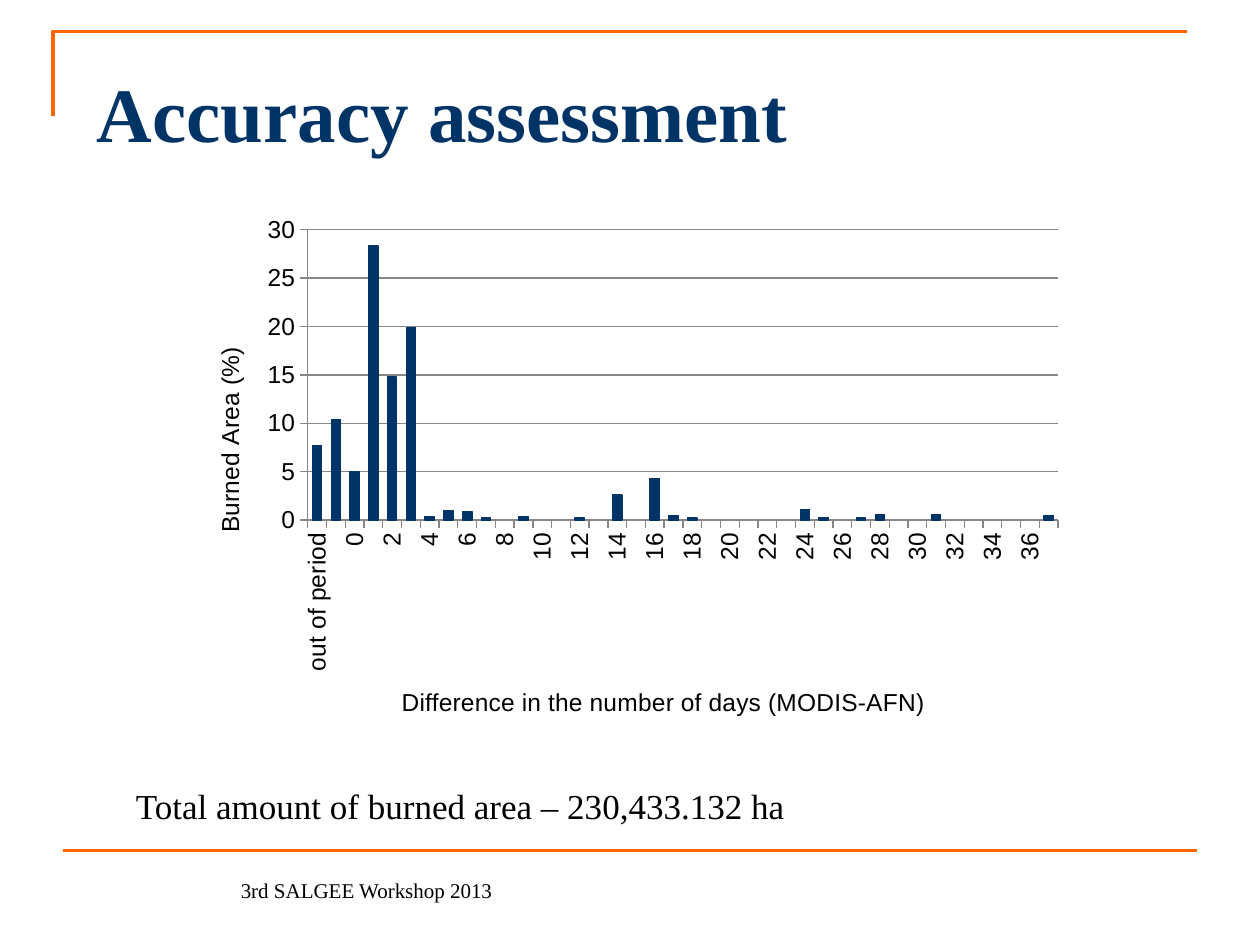
from dataclasses import dataclass
from lxml.etree import SubElement
from pptx import Presentation
from pptx.chart.data import CategoryChartData
from pptx.dml.color import RGBColor
from pptx.enum.chart import XL_CHART_TYPE, XL_TICK_MARK
from pptx.enum.shapes import MSO_CONNECTOR
from pptx.enum.text import MSO_ANCHOR, PP_ALIGN
from pptx.oxml.ns import qn
from pptx.util import Inches, Pt


@dataclass
class Theme:
    navy = RGBColor.from_string("003366")
    orange = RGBColor.from_string("FF6600")
    black = RGBColor.from_string("000000")
    gray = RGBColor.from_string("868686")
    serif = "Times New Roman"
    sans = "Arial"
    title = Pt(44)
    body = Pt(20)
    axis = Pt(14)
    foot = Pt(12)
    rule = Pt(2)
    thin = Pt(0.75)


deck = Presentation()
deck.slide_width, deck.slide_height = Inches(10), Inches(7.5)
slide = deck.slides.add_slide(deck.slide_layouts[6])
shapes = slide.shapes

# Grid of 100 columns by 75 rows
COL = deck.slide_width / 100
ROW = deck.slide_height / 75


def write(text, x, y, w, h, size, color=Theme.black, bold=False,
          align=PP_ALIGN.LEFT, anchor=MSO_ANCHOR.TOP):
    box = shapes.add_textbox(int(x * COL), int(y * ROW), int(w * COL), int(h * ROW))
    frame = box.text_frame
    frame.word_wrap = True
    frame.vertical_anchor = anchor
    para = frame.paragraphs[0]
    para.alignment = align
    run = para.add_run()
    run.text = text
    font = run.font
    font.name, font.size, font.bold = Theme.serif, size, bold
    font.color.rgb = color


def place(node, **spots):
    """Fix a chart part at the given shares of the chart's size."""
    layout = node.find(qn("c:layout"))
    if layout is None:
        layout = node.makeelement(qn("c:layout"))
        node.insert(0, layout)
    manual = SubElement(layout, qn("c:manualLayout"))
    if "w" in spots:
        SubElement(manual, qn("c:layoutTarget")).set("val", "inner")
    for side in "xy":
        SubElement(manual, qn(f"c:{side}Mode")).set("val", "edge")
    for key, share in spots.items():
        SubElement(manual, qn(f"c:{key}")).set("val", str(share))


# Corner and bottom rules
pen = shapes.build_freeform(int(4.2 * COL), int(9.2 * ROW))
pen.add_line_segments([(int(4.2 * COL), int(2.5 * ROW)),
                       (int(94.2 * COL), int(2.5 * ROW))], close=False)
corner = pen.convert_to_shape()
corner.shadow.inherit = False
corner.fill.background()
base = shapes.add_connector(MSO_CONNECTOR.STRAIGHT, int(5 * COL), int(67.5 * ROW),
                            int(95 * COL), int(67.5 * ROW))
for rule in (corner, base):
    rule.line.color.rgb = Theme.orange
    rule.line.width = Theme.rule
SubElement(base._element.spPr, qn("a:effectLst"))

# Chart data: the second bar has no label, days without burned area stay empty
head = {"out of period": 7.7, "": 10.4}
days = {0: 5, 1: 28.3, 2: 14.8, 3: 19.9, 4: 0.4, 5: 1, 6: 0.9, 7: 0.2, 9: 0.4,
        12: 0.2, 14: 2.6, 16: 4.3, 17: 0.5, 18: 0.2, 24: 1.1, 25: 0.3, 27: 0.2,
        28: 0.6, 31: 0.6, 37: 0.5}
span = range(38)
share_label = "Burned Area (%)"
data = CategoryChartData()
# Only every second label shows, so odd days carry none
data.categories = [*head, *("" if day % 2 else str(day) for day in span)]
data.add_series(share_label, [*head.values(), *map(days.get, span)])

chart = shapes.add_chart(XL_CHART_TYPE.COLUMN_CLUSTERED, int(14.5 * COL), int(16.1 * ROW),
                         int(70.9 * COL), int(42.7 * ROW), data).chart
chart.has_legend = chart.has_title = False
chart.font.name, chart.font.size = Theme.sans, Theme.axis
chart.font.color.rgb = Theme.black

plot = chart.plots[0]
plot.gap_width = 100
plot.vary_by_categories = False
bars = plot.series[0].format
bars.fill.solid()
bars.fill.fore_color.rgb = bars.line.color.rgb = Theme.navy
bars.line.width = Theme.thin
place(chart.element.find(".//" + qn("c:plotArea")), x=0.14, y=0.05, w=0.84, h=0.54)

cats, vals = chart.category_axis, chart.value_axis
for axis, label, x, y, turn in (
        (cats, "Difference in the number of days (MODIS-AFN)", 0.24, 0.89, 0),
        (vals, share_label, 0.03, 0.26, -5400000)):
    axis.major_tick_mark = XL_TICK_MARK.OUTSIDE
    axis.minor_tick_mark = XL_TICK_MARK.NONE
    axis.format.line.color.rgb = Theme.gray
    axis.format.line.width = Theme.thin
    axis.tick_labels.font.name = Theme.sans
    axis.tick_labels.font.size = Theme.axis
    axis.tick_labels.font.color.rgb = Theme.black
    frame = axis.axis_title.text_frame
    frame.text = label
    font = frame.paragraphs[0].runs[0].font
    font.name, font.size, font.bold = Theme.sans, Theme.axis, False
    font.color.rgb = Theme.black
    title = axis.axis_title._element
    title.find(".//" + qn("a:bodyPr")).set("rot", str(turn))
    place(title, x=x, y=y)

vals.minimum_scale, vals.maximum_scale, vals.major_unit = 0, 30, 5
vals.tick_labels.number_format = "0"
vals.tick_labels.number_format_is_linked = False
vals.has_major_gridlines = True
grid = vals.major_gridlines.format.line
grid.color.rgb, grid.width = Theme.gray, Theme.thin

# Upright labels on every second category
root = cats._element
root.find(qn("c:txPr")).find(qn("a:bodyPr")).set("rot", "-5400000")
skip = root.makeelement(qn("c:tickLblSkip"), {"val": "2"})
root.find(qn("c:noMultiLvlLbl")).addprevious(skip)

write("Total amount of burned area – 230,433.132 ha", 9.8, 61.8, 54.3, 4.4, size=Theme.body)
write("3rd SALGEE Workshop 2013", 5.1, 69, 48, 3.1, size=Theme.foot,
      align=PP_ALIGN.CENTER, anchor=MSO_ANCHOR.BOTTOM)
write("Accuracy assessment", 6.7, 4.7, 90, 12.5, size=Theme.title,
      color=Theme.navy, bold=True)

deck.save("out.pptx")
